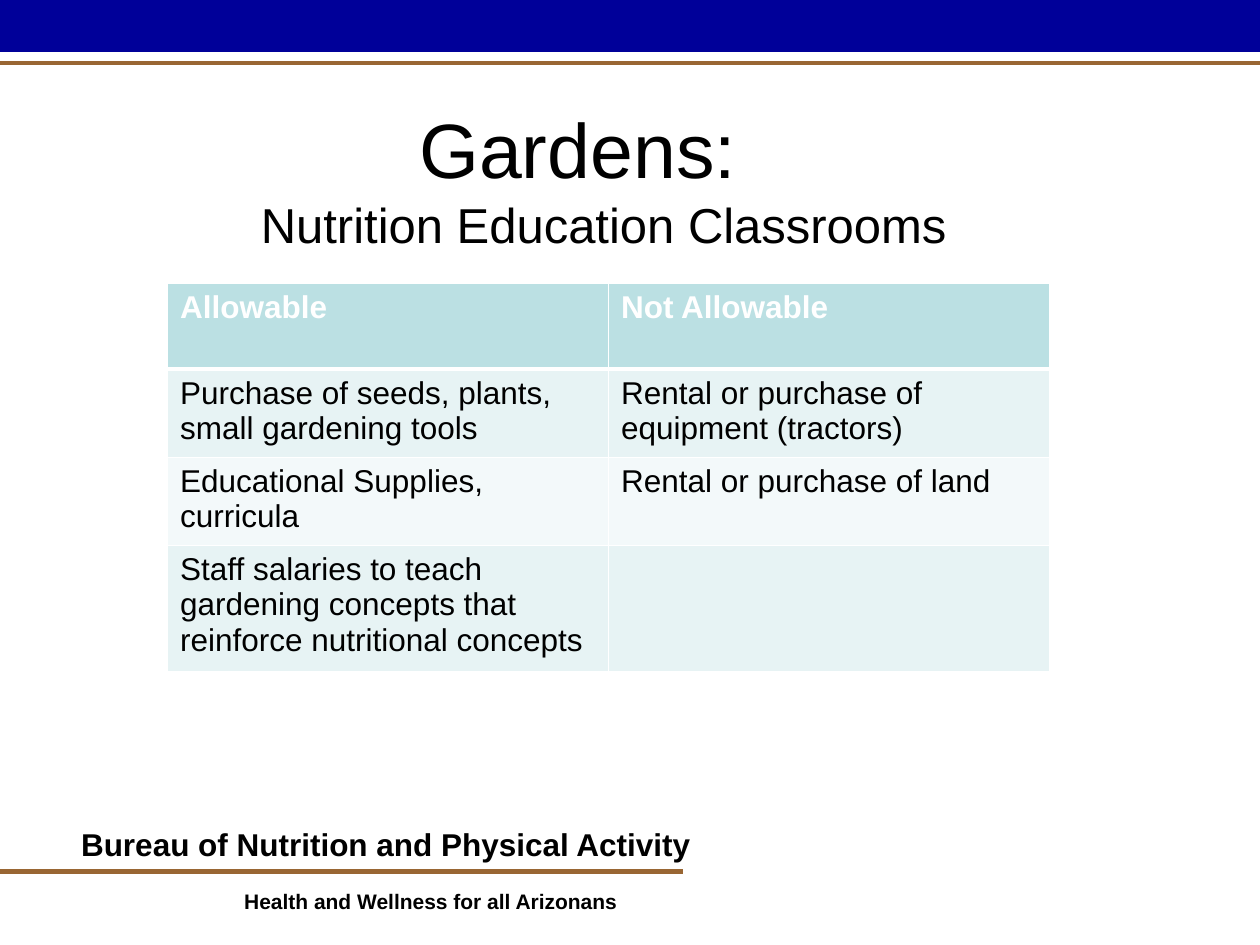
from typing import NamedTuple

from lxml.etree import SubElement
from pptx import Presentation
from pptx.dml.color import RGBColor
from pptx.enum.shapes import MSO_CONNECTOR as Connector, MSO_SHAPE as Preset
from pptx.enum.text import PP_ALIGN as Align
from pptx.oxml.ns import qn
from pptx.util import Inches, Pt

NAVY, BROWN, BLACK, WHITE = "000099", "996633", "000000", "FFFFFF"
HEADER_FILL = "BBE0E3"
BAND_FILLS = ("E7F3F4", "F3F9FA")


class Rule(NamedTuple):
    top: float
    length: float


class Footer(NamedTuple):
    text: str
    left: float
    top: float
    width: float
    height: float
    size: int


RULES = [Rule(0.5, 10), Rule(6.92, 5.42)]
FOOTERS = [
    Footer("Bureau of Nutrition and Physical Activity", 0.5, 6.5, 5.08, 0.4, 18),
    Footer("Health and Wellness for all Arizonans", 1.67, 7, 3.33, 0.3, 12),
]
ROWS = [
    ("Allowable", "Not Allowable"),
    ("Purchase of seeds, plants, small gardening tools",
     "Rental or purchase of equipment (tractors)"),
    ("Educational Supplies, curricula", "Rental or purchase of land"),
    ("Staff salaries to teach gardening concepts that reinforce nutritional concepts", ""),
]


def color(value: str) -> RGBColor:
    return RGBColor.from_string(value)


def write(para, text: str, *, size: int, fill: str = BLACK, bold: bool = False,
          align=Align.LEFT, indent: float = 0) -> None:
    para.alignment = align
    if indent:
        properties = para._p.get_or_add_pPr()
        properties.set("marL", str(Inches(indent)))
        properties.set("indent", "0")
    span = para.add_run()
    span.text = text
    span.font.name = "Arial"
    span.font.size = Pt(size)
    span.font.bold = bold
    span.font.color.rgb = color(fill)


def add_box(page, left: float, top: float, width: float, height: float):
    box = page.shapes.add_textbox(Inches(left), Inches(top), Inches(width), Inches(height))
    box.text_frame.word_wrap = True
    return box.text_frame


def add_rule(page, rule: Rule) -> None:
    line = page.shapes.add_connector(
        Connector.STRAIGHT, 0, Inches(rule.top), Inches(rule.length), Inches(rule.top))
    line.line.color.rgb = color(BROWN)
    line.line.width = Pt(2.75)
    SubElement(line._element.spPr, qn("a:effectLst"))


def add_banner(page) -> None:
    banner = page.shapes.add_shape(Preset.RECTANGLE, 0, 0, Inches(10), Inches(0.41))
    banner.shadow.inherit = False
    banner.fill.solid()
    banner.fill.fore_color.rgb = color(NAVY)
    banner.line.color.rgb = color(NAVY)
    banner.line.width = Pt(0.75)


def add_footer(page, footer: Footer) -> None:
    frame = add_box(page, footer.left, footer.top, footer.width, footer.height)
    write(frame.paragraphs[0], footer.text, size=footer.size, bold=True, align=Align.RIGHT)


def add_title(page) -> None:
    frame = add_box(page, 0.25, 0.76, 9.08, 1.25)
    write(frame.paragraphs[0], "Gardens:", size=44, indent=2.98)
    write(frame.add_paragraph(), "Nutrition Education Classrooms", size=28, align=Align.CENTER)


def style_cell(cell, fill: str, top: float, bottom: float) -> None:
    properties = cell._tc.get_or_add_tcPr()
    for side, width in (("L", 1), ("R", 1), ("T", top), ("B", bottom)):
        border = SubElement(properties, qn(f"a:ln{side}"), w=str(Pt(width)))
        solid = SubElement(border, qn("a:solidFill"))
        SubElement(solid, qn("a:srgbClr"), val=WHITE)
    cell.fill.solid()
    cell.fill.fore_color.rgb = color(fill)


def add_rows(page) -> None:
    height = 0.68
    table = page.shapes.add_table(
        len(ROWS), 2, Inches(1.33), Inches(2.25), Inches(7), Inches(height * len(ROWS))).table
    for index, texts in enumerate(ROWS):
        table.rows[index].height = Inches(height)
        header = index == 0
        fill = HEADER_FILL if header else BAND_FILLS[(index - 1) % 2]
        for column, text in enumerate(texts):
            cell = table.cell(index, column)
            style_cell(cell, fill, top=3 if index == 1 else 1, bottom=3 if header else 1)
            if text:
                write(cell.text_frame.paragraphs[0], text, size=18,
                      fill=WHITE if header else BLACK, bold=header)


def main() -> None:
    deck = Presentation()
    deck.slide_width, deck.slide_height = Inches(10), Inches(7.5)
    page = deck.slides.add_slide(deck.slide_layouts[6])
    add_banner(page)
    for rule in RULES:
        add_rule(page, rule)
    for footer in FOOTERS:
        add_footer(page, footer)
    add_title(page)
    add_rows(page)
    deck.save("out.pptx")


if __name__ == "__main__":
    main()
